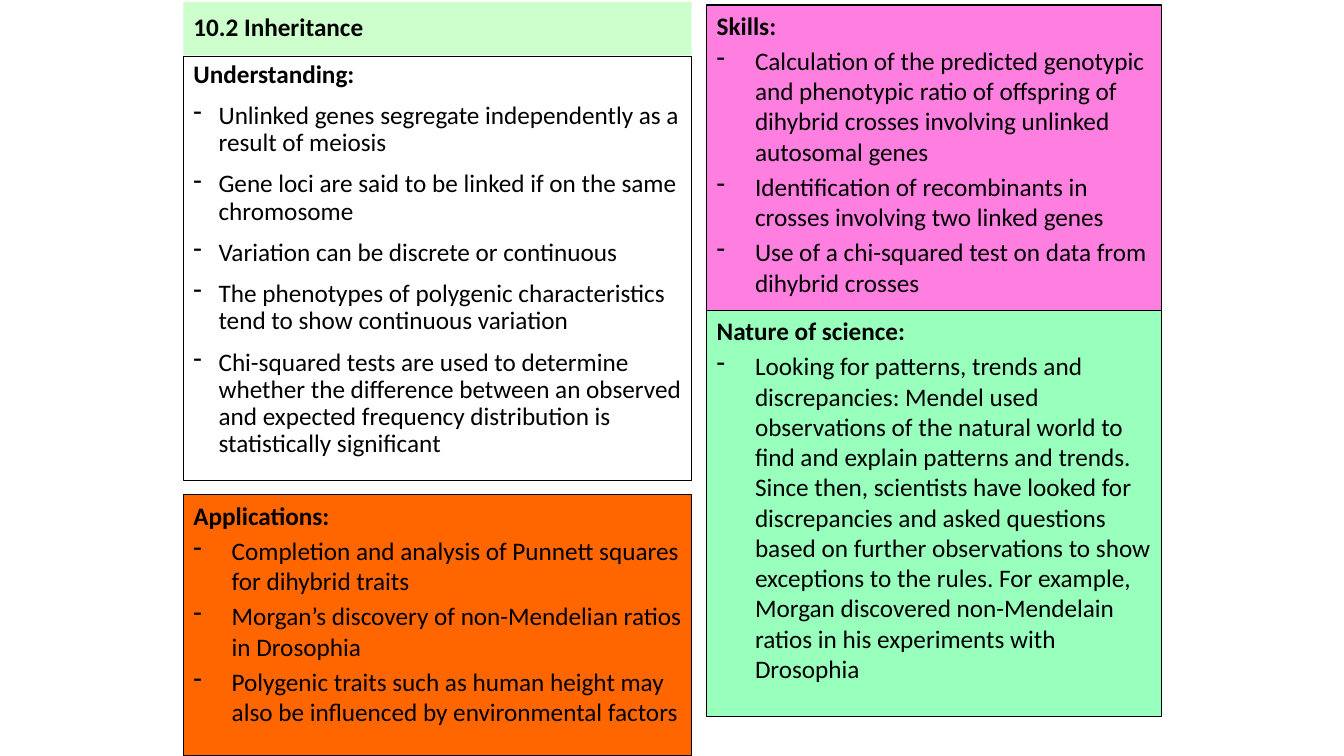
import pptx
import pptx.dml.color
import pptx.enum.shapes
import pptx.enum.text
import pptx.util
from lxml import etree
from pptx.util import Inches

COLOURS = {
    "text": "000000",
    "outline": "000000",
    "title": "CCFFCC",
    "skills": "FF7FE1",
    "nature": "98FFBC",
    "applications": "FF6600",
}
FONT = "Calibri"
FONT_SIZE = 18

# Columns: left edge and width
LEFT_COLUMN = (1.82, 5.04)
RIGHT_COLUMN = (7.01, 4.51)

UNDERSTANDING = [
    "Unlinked genes segregate independently as a result of meiosis",
    "Gene loci are said to be linked if on the same chromosome",
    "Variation can be discrete or continuous",
    "The phenotypes of polygenic characteristics tend to show continuous variation",
    "Chi-squared tests are used to determine whether the difference between an "
    "observed and expected frequency distribution is statistically significant",
]
APPLICATIONS = [
    "Completion and analysis of Punnett squares for dihybrid traits",
    "Morgan’s discovery of non-Mendelian ratios in Drosophia",
    "Polygenic traits such as human height may also be influenced by "
    "environmental factors",
]
SKILLS = [
    "Calculation of the predicted genotypic and phenotypic ratio of offspring of "
    "dihybrid crosses involving unlinked autosomal genes",
    "Identification of recombinants in crosses involving two linked genes",
    "Use of a chi-squared test on data from dihybrid crosses",
]
NATURE = [
    "Looking for patterns, trends and discrepancies: Mendel used observations of "
    "the natural world to find and explain patterns and trends. Since then, "
    "scientists have looked for discrepancies and asked questions based on further "
    "observations to show exceptions to the rules. For example, Morgan discovered "
    "non-Mendelain ratios in his experiments with Drosophia",
]


def colour(name):
    return pptx.dml.color.RGBColor.from_string(COLOURS[name])


def add_box(slide, column, top, height, fill=None, outlined=True):
    left, width = column
    shape = slide.shapes.add_shape(
        pptx.enum.shapes.MSO_SHAPE.RECTANGLE,
        Inches(left), Inches(top), Inches(width), Inches(height))
    shape.shadow.inherit = False
    if fill:
        shape.fill.solid()
        shape.fill.fore_color.rgb = colour(fill)
    else:
        shape.fill.background()
    if outlined:
        shape.line.color.rgb = colour("outline")
        shape.line.width = pptx.util.Pt(0.75)
    else:
        shape.line.fill.background()
    shape.text_frame.word_wrap = True
    return shape


def format_paragraph(paragraph, bold, line_spacing, space_before):
    paragraph.alignment = pptx.enum.text.PP_ALIGN.LEFT
    paragraph.line_spacing = line_spacing
    paragraph.space_before = pptx.util.Pt(space_before)
    for run in paragraph.runs:
        run.font.name = FONT
        run.font.size = pptx.util.Pt(FONT_SIZE)
        run.font.bold = bold
        run.font.color.rgb = colour("text")


def add_dash(paragraph, indent):
    properties = paragraph._p.get_or_add_pPr()
    properties.set("marL", str(Inches(indent)))
    properties.set("indent", str(-Inches(indent)))
    bullet = etree.SubElement(properties, pptx.oxml.ns.qn("a:buChar"))
    bullet.set("char", "-")


def add_title(slide, column, top, height):
    shape = add_box(slide, column, top, height, "title", outlined=False)
    frame = shape.text_frame
    frame.vertical_anchor = pptx.enum.text.MSO_ANCHOR.MIDDLE
    frame.text = "10.2 Inheritance"
    format_paragraph(frame.paragraphs[0], True, 0.9, 0)


def add_section(slide, column, top, height, heading, points, fill=None,
                indent=0.38, line_spacing=1.0, space_before=3.6):
    frame = add_box(slide, column, top, height, fill).text_frame
    frame.vertical_anchor = pptx.enum.text.MSO_ANCHOR.TOP
    frame.text = "\n".join([heading, *points])
    for index, paragraph in enumerate(frame.paragraphs):
        format_paragraph(paragraph, index == 0, line_spacing, space_before)
        if index > 0:
            add_dash(paragraph, indent)


def main():
    presentation = pptx.Presentation()
    presentation.slide_width = Inches(13.33)
    presentation.slide_height = Inches(7.5)
    slide = presentation.slides.add_slide(presentation.slide_layouts[6])

    # Left column
    add_title(slide, LEFT_COLUMN, 0.02, 0.53)
    add_section(slide, LEFT_COLUMN, 0.56, 4.21, "Understanding:", UNDERSTANDING,
                indent=0.25, line_spacing=0.9, space_before=10)

    # Right column
    add_section(slide, RIGHT_COLUMN, 0.05, 3.03, "Skills:", SKILLS, "skills")
    add_section(slide, RIGHT_COLUMN, 3.08, 4.03, "Nature of science:", NATURE, "nature")

    # Foot of the left column
    add_section(slide, LEFT_COLUMN, 4.91, 2.59, "Applications:", APPLICATIONS,
                "applications")

    presentation.save("out.pptx")


if __name__ == "__main__":
    main()
